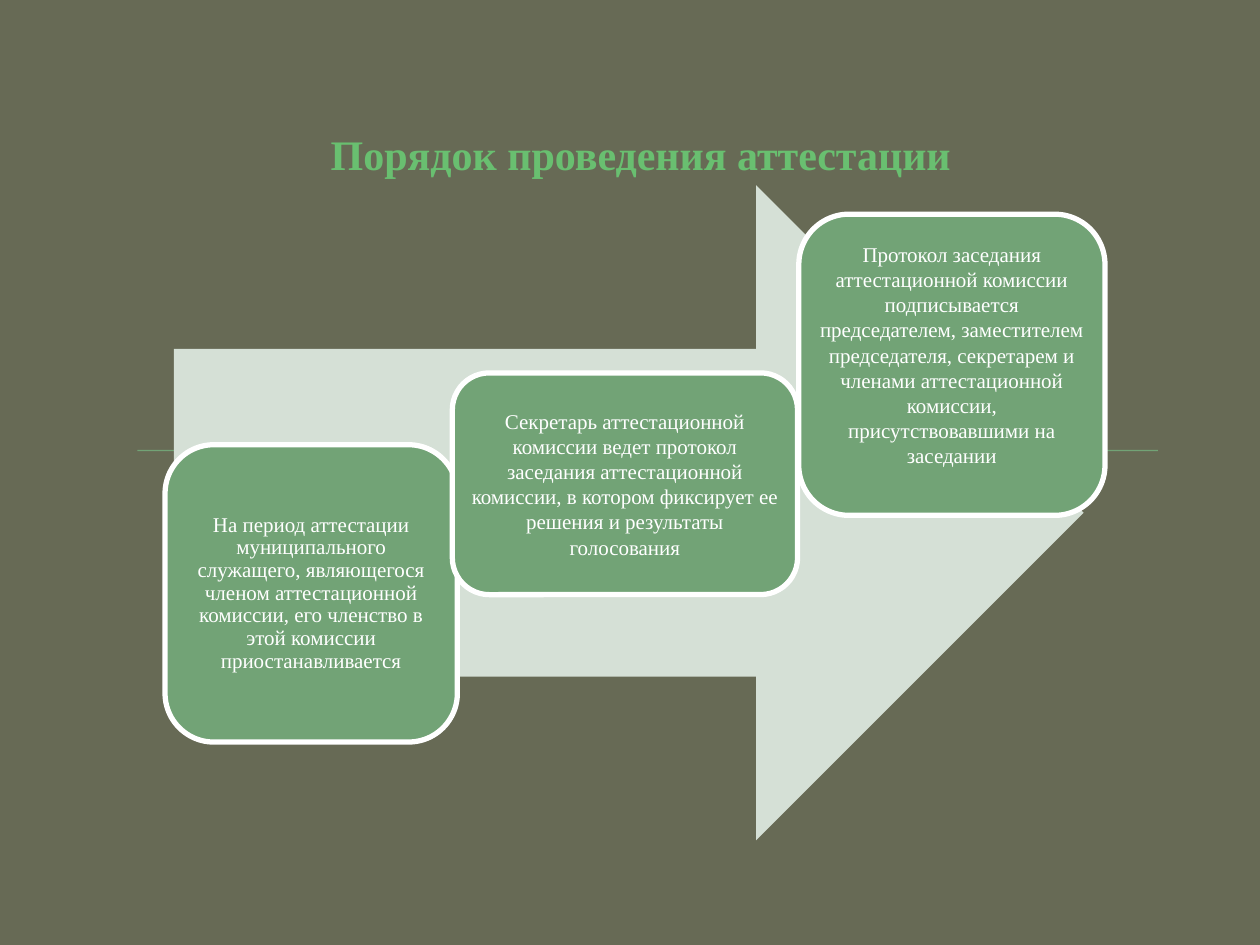
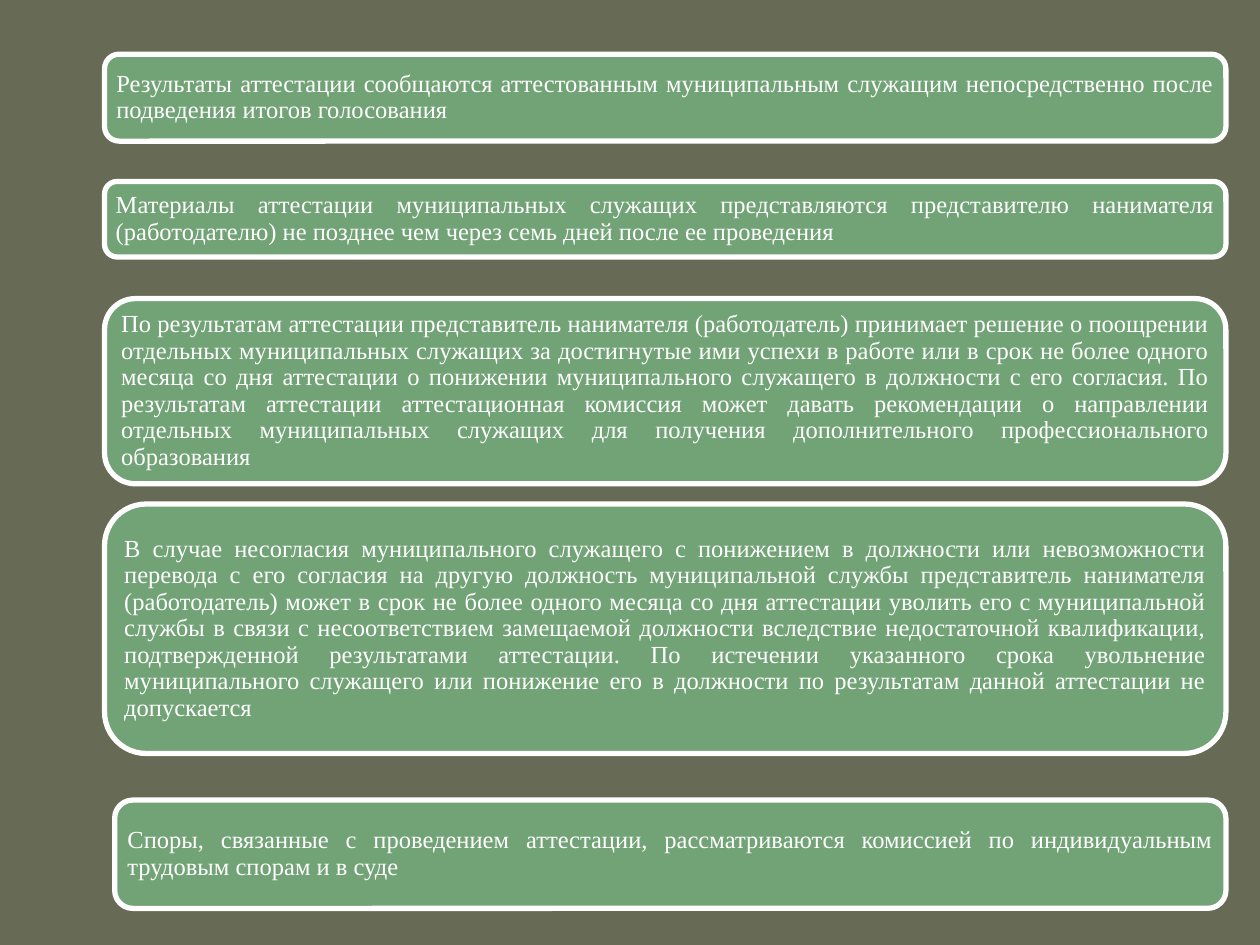
import pptx
import pptx.util
import pptx.dml.color
import pptx.enum.shapes
import pptx.enum.text
from dataclasses import dataclass

Inches = pptx.util.Inches
Pt = pptx.util.Pt
SHAPE = pptx.enum.shapes.MSO_SHAPE
ALIGN = pptx.enum.text.PP_ALIGN
ANCHOR = pptx.enum.text.MSO_ANCHOR


@dataclass(frozen=True)
class Theme:
    background: str = "676A55"
    accent: str = "72A376"
    pale: str = "D5E0D6"
    title: str = "69BF70"
    light: str = "FFFFFF"
    font: str = "Times New Roman"
    title_size: int = 24
    step_size: int = 12
    rule_size: int = 14
    border: int = 3


THEME = Theme()

STEPS = [
    ((0.22, 2.61, 2.32, 2.36),
     "На период аттестации муниципального служащего, являющегося членом "
     "аттестационной комиссии, его членство в этой комиссии приостанавливается",
     dict(spacing=0.9)),
    ((2.5, 2.04, 2.74, 1.76),
     "Секретарь аттестационной комиссии ведет протокол заседания аттестационной "
     "комиссии, в котором фиксирует ее решения и результаты голосования",
     {}),
    ((5.25, 0.78, 2.43, 2.39),
     "Протокол заседания аттестационной комиссии подписывается председателем, "
     "заместителем председателя, секретарем и членами аттестационной комиссии, "
     "присутствовавшими на заседании",
     dict(insets=(0.05, 0.05, 0.05, 0.21))),
]

RULES = [
    ((0, 0, 8.9, 0.69),
     "Результаты аттестации сообщаются аттестованным муниципальным служащим "
     "непосредственно после подведения итогов голосования"),
    ((0, 1.01, 8.9, 0.6),
     "Материалы аттестации муниципальных служащих представляются представителю "
     "нанимателя (работодателю) не позднее чем через семь дней после ее проведения"),
    ((0, 1.94, 8.9, 1.47),
     "По результатам аттестации представитель нанимателя (работодатель) принимает "
     "решение о поощрении отдельных муниципальных служащих за достигнутые ими успехи "
     "в работе или в срок не более одного месяца со дня аттестации о понижении "
     "муниципального служащего в должности с его согласия. По результатам аттестации "
     "аттестационная комиссия может давать рекомендации о направлении отдельных "
     "муниципальных служащих для получения дополнительного профессионального "
     "образования"),
    ((0, 3.57, 8.9, 1.98),
     "В случае несогласия муниципального служащего с понижением в должности или "
     "невозможности перевода с его согласия на другую должность муниципальной службы "
     "представитель нанимателя (работодатель) может в срок не более одного месяца со "
     "дня аттестации уволить его с муниципальной службы в связи с несоответствием "
     "замещаемой должности вследствие недостаточной квалификации, подтвержденной "
     "результатами аттестации. По истечении указанного срока увольнение "
     "муниципального служащего или понижение его в должности по результатам данной "
     "аттестации не допускается"),
    ((0.08, 5.92, 8.82, 0.86),
     "Споры, связанные с проведением аттестации, рассматриваются комиссией по "
     "индивидуальным трудовым спорам и в суде"),
]


def rgb(value):
    return pptx.dml.color.RGBColor.from_string(value)


def write(sp, text, size, color=THEME.light, bold=False, align=ALIGN.CENTER,
          anchor=ANCHOR.MIDDLE, spacing=1.0, insets=(0.05,) * 4):
    tf = sp.text_frame
    tf.word_wrap = True
    tf.vertical_anchor = anchor
    (tf.margin_left, tf.margin_top,
     tf.margin_right, tf.margin_bottom) = map(Inches, insets)
    p = tf.paragraphs[0]
    p.alignment = align
    p.line_spacing = spacing
    r = p.add_run()
    r.text = text
    r.font.name = THEME.font
    r.font.size = Pt(size)
    r.font.bold = bold
    r.font.color.rgb = rgb(color)


def add_block(s, kind, box, fill, line=None):
    sp = s.shapes.add_shape(kind, *map(Inches, box))
    sp.shadow.inherit = False
    sp.fill.solid()
    sp.fill.fore_color.rgb = rgb(fill)
    if line:
        sp.line.color.rgb = rgb(line)
        sp.line.width = Pt(THEME.border)
    else:
        sp.line.fill.background()
    return sp


def add_card(s, origin, box, text, size, **style):
    left, top, width, height = box
    placed = (origin[0] + left, origin[1] + top, width, height)
    sp = add_block(s, SHAPE.ROUNDED_RECTANGLE, placed, THEME.accent, THEME.light)
    write(sp, text, size, **style)


def add_base(prs):
    s = prs.slides.add_slide(prs.slide_layouts[6])
    s.background.fill.solid()
    s.background.fill.fore_color.rgb = rgb(THEME.background)
    add_block(s, SHAPE.RECTANGLE, (1.09, 3.57, 8.1, 0.01), THEME.accent)
    return s


def add_title(s, box, text):
    sp = s.shapes.add_textbox(*map(Inches, box))
    write(sp, text, THEME.title_size, color=THEME.title, bold=True,
          anchor=ANCHOR.BOTTOM, insets=(0.16, 0.05, 0.11, 0.05))


def add_steps(s, box):
    left, top, width, height = box
    arrow = (left + 0.29, top + 0.55, width - 0.58, height - 0.55)
    add_block(s, SHAPE.RIGHT_ARROW, arrow, THEME.pale)
    for card, text, style in STEPS:
        add_card(s, (left, top), card, text, THEME.step_size, **style)


def add_rules(s, origin):
    for card, text in RULES:
        add_card(s, origin, card, text, THEME.rule_size, align=ALIGN.JUSTIFY,
                 spacing=0.9, insets=(0.06,) * 4)


def main():
    prs = pptx.Presentation()
    prs.slide_width, prs.slide_height = Inches(10), Inches(7.5)
    s = add_base(prs)
    add_title(s, (0.79, 0.92, 8.54, 0.55), "Порядок проведения аттестации")
    add_steps(s, (1.09, 0.92, 7.8, 5.75))
    add_rules(add_base(prs), (0.83, 0.43))
    prs.save("out.pptx")


if __name__ == "__main__":
    main()
